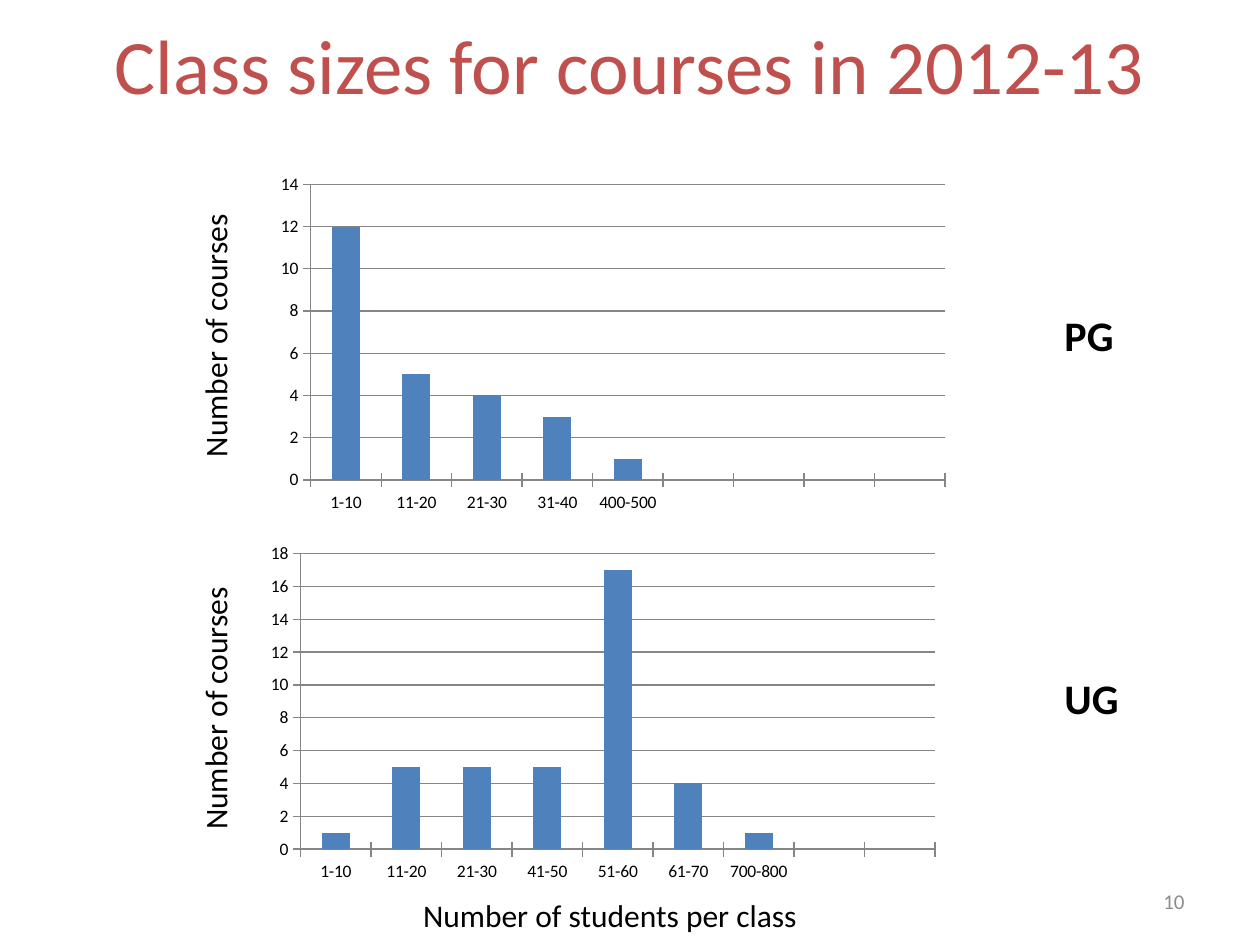
"""Build the slide comparing PG and UG class sizes."""
from dataclasses import dataclass

import pptx
import pptx.chart.chart
import pptx.chart.data
import pptx.dml.color
import pptx.enum.chart
import pptx.enum.text
import pptx.slide
import pptx.util

Inches = pptx.util.Inches
Align = pptx.enum.text.PP_ALIGN
Anchor = pptx.enum.text.MSO_ANCHOR
BLACK = pptx.dml.color.RGBColor(0x00, 0x00, 0x00)
RED = pptx.dml.color.RGBColor(0xC0, 0x50, 0x4D)
BLUE = pptx.dml.color.RGBColor(0x4F, 0x81, 0xBD)
GRAY = pptx.dml.color.RGBColor(0x8C, 0x8C, 0x8C)
LINE_GRAY = pptx.dml.color.RGBColor(0x86, 0x86, 0x86)
FONT = "Calibri"
SLOTS = 9


@dataclass(frozen=True)
class Histogram:
    left: float
    top: float
    counts: dict[str, int]


@dataclass(frozen=True)
class Label:
    text: str
    left: float
    top: float
    width: float
    height: float
    size: int
    color: pptx.dml.color.RGBColor = BLACK
    bold: bool = False
    align: Align = Align.LEFT
    anchor: Anchor = Anchor.TOP
    rotation: int = 0
    wrap: bool = False


HISTOGRAMS = [
    Histogram(2.12, 1.33, {"1-10": 12, "11-20": 5, "21-30": 4, "31-40": 3, "400-500": 1}),
    Histogram(2.04, 4.26, {"1-10": 1, "11-20": 5, "21-30": 5, "41-50": 5,
                           "51-60": 17, "61-70": 4, "700-800": 1}),
]
LABELS = [
    *(Label("Number of courses", 0.63, top, 2.15, 0.4, 18, rotation=270) for top in (5.41, 2.45)),
    Label("PG", 8.35, 2.41, 0.6, 0.5, 24, bold=True),
    Label("UG", 8.35, 5.29, 0.64, 0.5, 24, bold=True),
    Label("Number of students per class", 3.26, 7.06, 3.2, 0.4, 18),
    Label("Class sizes for courses in 2012-13", 0.5, 0.09, 9, 1.25, 44, RED,
          align=Align.CENTER, wrap=True),
    Label("10", 7.17, 6.95, 2.33, 0.4, 12, GRAY,
          align=Align.RIGHT, anchor=Anchor.MIDDLE, wrap=True),
]


def style_line(line: pptx.dml.line.LineFormat) -> None:
    line.color.rgb = LINE_GRAY
    line.width = pptx.util.Pt(0.75)


def draw_histogram(page: pptx.slide.Slide, histogram: Histogram) -> None:
    spare = SLOTS - len(histogram.counts)
    data = pptx.chart.data.CategoryChartData()
    data.categories = [*histogram.counts, *[""] * spare]
    data.add_series("Series 1", [*histogram.counts.values(), *[None] * spare])
    chart = page.shapes.add_chart(
        pptx.enum.chart.XL_CHART_TYPE.COLUMN_CLUSTERED,
        Inches(histogram.left), Inches(histogram.top), Inches(5.49), Inches(2.79), data,
    ).chart
    chart.has_legend = False
    chart.has_title = False
    chart.font.name = FONT
    chart.font.size = pptx.util.Pt(10)
    chart.font.color.rgb = BLACK
    for axis in (chart.category_axis, chart.value_axis):
        axis.major_tick_mark = pptx.enum.chart.XL_TICK_MARK.CROSS
        style_line(axis.format.line)
    chart.value_axis.has_major_gridlines = True
    style_line(chart.value_axis.major_gridlines.format.line)
    plot = chart.plots[0]
    plot.gap_width = 150
    plot.vary_by_categories = False
    fill = plot.series[0].format.fill
    fill.solid()
    fill.fore_color.rgb = BLUE


def draw_label(page: pptx.slide.Slide, label: Label) -> None:
    box = page.shapes.add_textbox(
        Inches(label.left), Inches(label.top), Inches(label.width), Inches(label.height))
    box.rotation = label.rotation
    frame = box.text_frame
    frame.text = label.text
    frame.word_wrap = label.wrap
    frame.vertical_anchor = label.anchor
    if not label.wrap:
        frame.auto_size = pptx.enum.text.MSO_AUTO_SIZE.SHAPE_TO_FIT_TEXT
    para = frame.paragraphs[0]
    para.alignment = label.align
    font = para.runs[0].font
    font.name = FONT
    font.size = pptx.util.Pt(label.size)
    font.bold = label.bold
    font.color.rgb = label.color


def main() -> None:
    deck = pptx.Presentation()
    deck.slide_width = Inches(10)
    deck.slide_height = Inches(7.5)
    page = deck.slides.add_slide(deck.slide_layouts[6])
    for histogram in HISTOGRAMS:
        draw_histogram(page, histogram)
    for label in LABELS:
        draw_label(page, label)
    deck.save("out.pptx")


if __name__ == "__main__":
    main()
